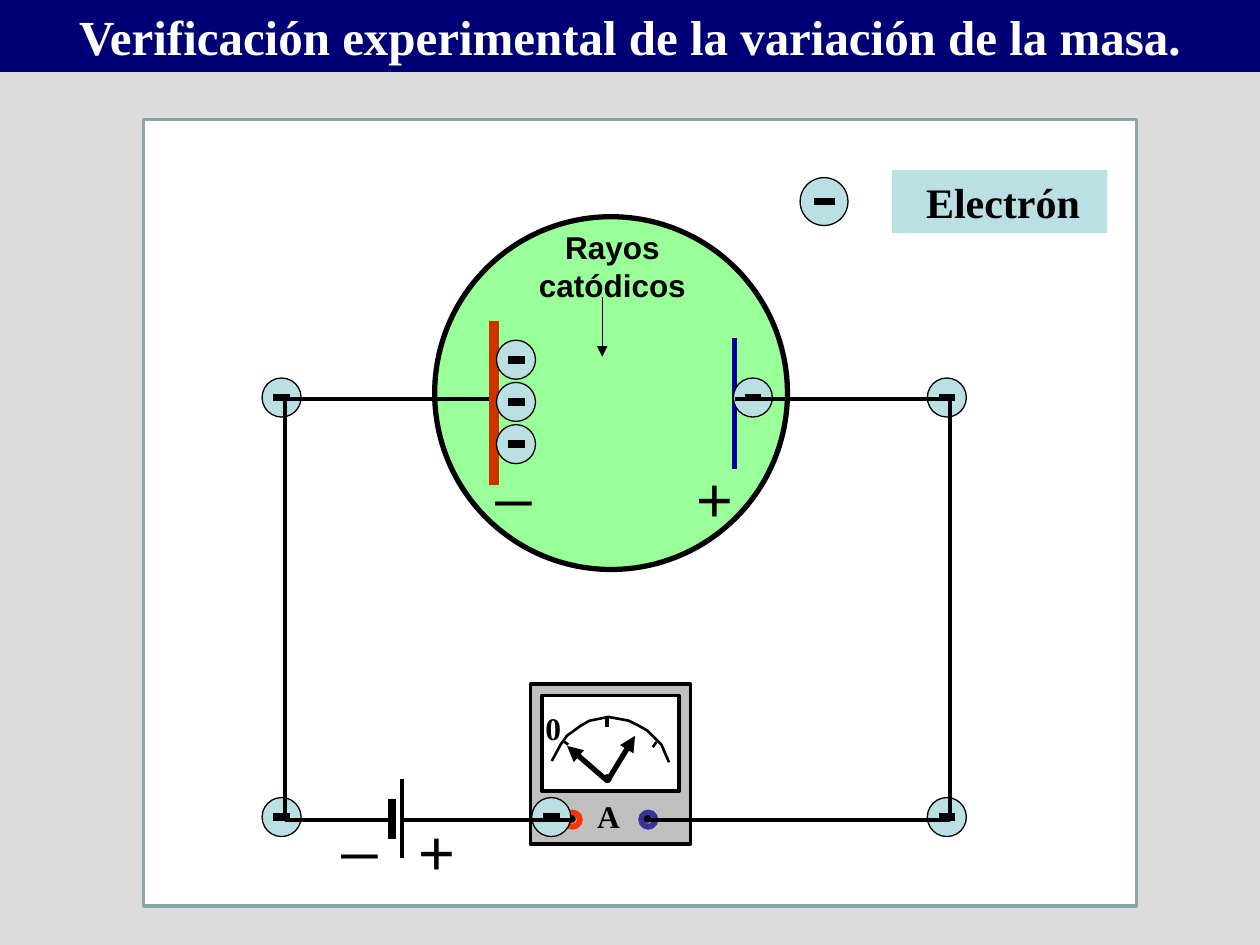
from dataclasses import dataclass

from lxml import etree
from pptx import Presentation
from pptx.dml.color import RGBColor
from pptx.enum import shapes, text
from pptx.oxml.ns import qn
from pptx.util import Inches, Pt


@dataclass(frozen=True)
class Theme:
    black: str = "000000"
    white: str = "FFFFFF"
    navy: str = "000076"
    background: str = "DDDDDD"
    frame: str = "8AA6A8"
    tube: str = "99FF99"
    electron: str = "BBE0E3"
    cathode: str = "CC3300"
    anode: str = "000099"
    meter: str = "C0C0C0"
    red_terminal: str = "FF3300"
    blue_terminal: str = "333399"
    serif: str = "Times New Roman"
    sans: str = "Arial"
    title_size: int = 28
    legend_size: int = 24
    label_size: int = 18
    sign_size: int = 36


theme = Theme()
kinds = shapes.MSO_SHAPE


def add_shape(kind, left, top, width, height, fill, line=None, weight=0.75):
    shape = slide.shapes.add_shape(kind, Inches(left), Inches(top), Inches(width), Inches(height))
    shape.shadow.inherit = False
    shape.fill.solid()
    shape.fill.fore_color.rgb = RGBColor.from_string(fill)
    if line:
        shape.line.color.rgb = RGBColor.from_string(line)
        shape.line.width = Pt(weight)
    else:
        shape.line.fill.background()
    return shape


def add_line(x1, y1, x2, y2, weight=2.25, color=theme.black, arrow=False):
    connector = slide.shapes.add_connector(
        shapes.MSO_CONNECTOR.STRAIGHT, Inches(x1), Inches(y1), Inches(x2), Inches(y2))
    connector.line.color.rgb = RGBColor.from_string(color)
    connector.line.width = Pt(weight)
    properties = connector.element.spPr
    if arrow:
        etree.SubElement(properties.find(qn("a:ln")), qn("a:tailEnd"), type="triangle")
    etree.SubElement(properties, qn("a:effectLst"))


presentation = Presentation()
presentation.slide_width = Inches(10)
presentation.slide_height = Inches(7.5)
slide = presentation.slides.add_slide(presentation.slide_layouts[5])
slide.background.fill.solid()
slide.background.fill.fore_color.rgb = RGBColor.from_string(theme.background)

title = slide.shapes.title
title.left, title.top, title.width, title.height = Inches(0), Inches(0), Inches(10), Inches(0.57)
title.fill.solid()
title.fill.fore_color.rgb = RGBColor.from_string(theme.navy)
title.text_frame.text = "Verificación experimental de la variación de la masa."
title.text_frame.auto_size = text.MSO_AUTO_SIZE.NONE
title.text_frame.vertical_anchor = text.MSO_ANCHOR.TOP
paragraph = title.text_frame.paragraphs[0]
paragraph.alignment = text.PP_ALIGN.CENTER
paragraph.font.name = theme.serif
paragraph.font.size = Pt(theme.title_size)
paragraph.font.bold = True
paragraph.font.color.rgb = RGBColor.from_string(theme.white)

add_shape(kinds.RECTANGLE, 1.14, 0.95, 7.88, 6.24, theme.white, theme.frame, 2)
add_shape(kinds.OVAL, 3.45, 1.72, 2.8, 2.8, theme.tube, theme.black, 3)
add_line(3.92, 3.85, 3.92, 2.55, 6, theme.cathode)
add_line(5.83, 2.68, 5.83, 3.72, 3, theme.anode)

add_shape(kinds.RECTANGLE, 4.21, 5.43, 1.27, 1.27, theme.meter, theme.black, 2)
add_shape(kinds.RECTANGLE, 4.3, 5.52, 1.09, 0.76, theme.white, theme.black, 2)
for left, color in ((4.47, theme.red_terminal), (5.07, theme.blue_terminal)):
    ring = add_shape(kinds.DONUT, left, 6.43, 0.15, 0.15, color, color)
    ring.adjustments[0] = 0.25
    add_shape(kinds.OVAL, left + 0.04, 6.47, 0.06, 0.06, theme.black)

scale_points = [(4.38, 6.04), (4.45, 5.91), (4.5, 5.84), (4.61, 5.76), (4.68, 5.72),
                (4.83, 5.69), (4.99, 5.72), (5.07, 5.76), (5.14, 5.8), (5.25, 5.91),
                (5.28, 5.98), (5.31, 6.05)]
scale_points = [(Inches(x), Inches(y)) for x, y in scale_points]
builder = slide.shapes.build_freeform(*scale_points[0])
builder.add_line_segments(scale_points[1:], close=False)
scale = builder.convert_to_shape()
scale.shadow.inherit = False
scale.fill.background()
scale.line.color.rgb = RGBColor.from_string(theme.black)
scale.line.width = Pt(1.5)
add_line(4.47, 5.88, 4.51, 5.91, 1.5)
add_line(4.82, 5.69, 4.82, 5.77)
add_line(5.21, 5.89, 5.18, 5.93, 1.5)
add_line(4.82, 6.2, 5.04, 5.84, 3, arrow=True)
add_line(4.8, 6.18, 4.5, 5.92, 3, arrow=True)
add_shape(kinds.OVAL, 4.79, 6.15, 0.06, 0.06, theme.black, theme.black)

electrons = [(6.35, 1.41, 0.38), (5.82, 3, 0.31), (4.22, 6.33, 0.31)]
electrons += [(3.94, 2.7 + 0.335 * row, 0.31) for row in range(3)]
electrons += [(left, top, 0.31) for left in (2.08, 7.36) for top in (3, 6.33)]
for left, top, size in electrons:
    add_shape(kinds.OVAL, left, top, size, size, theme.electron, theme.black)
    middle = top + size / 2
    add_line(left + 0.29 * size, middle, left + 0.72 * size, middle, 4.5)

wires = [(3.88, 3.17, 2.26, 3.17), (2.26, 3.17, 2.26, 6.51), (2.26, 6.51, 3.14, 6.51),
         (3.2, 6.51, 4.54, 6.51), (5.15, 6.51, 7.54, 6.51), (7.54, 6.51, 7.54, 3.17),
         (7.54, 3.17, 5.83, 3.17)]
for wire in wires:
    add_line(*wire)
add_line(3.19, 6.18, 3.19, 6.81)
add_line(3.11, 6.34, 3.11, 6.66, 4.5)
add_line(4.78, 2.36, 4.78, 2.83, 0.75, arrow=True)

legend = add_shape(kinds.RECTANGLE, 7.08, 1.35, 1.71, 0.5, theme.electron)
labels = [
    (legend, "Electrón", theme.serif, theme.legend_size, True, 0.27),
    ((4.17, 1.76, 1.38, 0.7), "Rayos catódicos", theme.sans, theme.label_size, True, 0.1),
    ((4.23, 5.58, 0.33, 0.4), "0", theme.serif, theme.label_size, True, 0.1),
    ((4.64, 6.28, 0.38, 0.4), "A", theme.serif, theme.label_size, True, 0.1),
    ((3.22, 6.4, 0.87, 0.7), "+", theme.sans, theme.sign_size, False, 0.1),
    ((2.62, 6.17, 0.87, 0.7), "_", theme.sans, theme.sign_size, False, 0.1),
    ((3.84, 3.37, 0.48, 0.7), "_", theme.sans, theme.sign_size, False, 0.1),
    ((5.43, 3.6, 0.49, 0.7), "+", theme.sans, theme.sign_size, False, 0.1),
]
for place, wording, font, size, bold, margin in labels:
    shape = place if place is legend else slide.shapes.add_textbox(*map(Inches, place))
    frame = shape.text_frame
    frame.word_wrap = True
    frame.vertical_anchor = text.MSO_ANCHOR.TOP
    frame.margin_left = Inches(margin)
    frame.text = wording
    paragraph = frame.paragraphs[0]
    centred = wording == "Rayos catódicos"
    paragraph.alignment = text.PP_ALIGN.CENTER if centred else text.PP_ALIGN.LEFT
    paragraph.font.name = font
    paragraph.font.size = Pt(size)
    paragraph.font.bold = bold
    paragraph.font.color.rgb = RGBColor.from_string(theme.black)

presentation.save("out.pptx")
